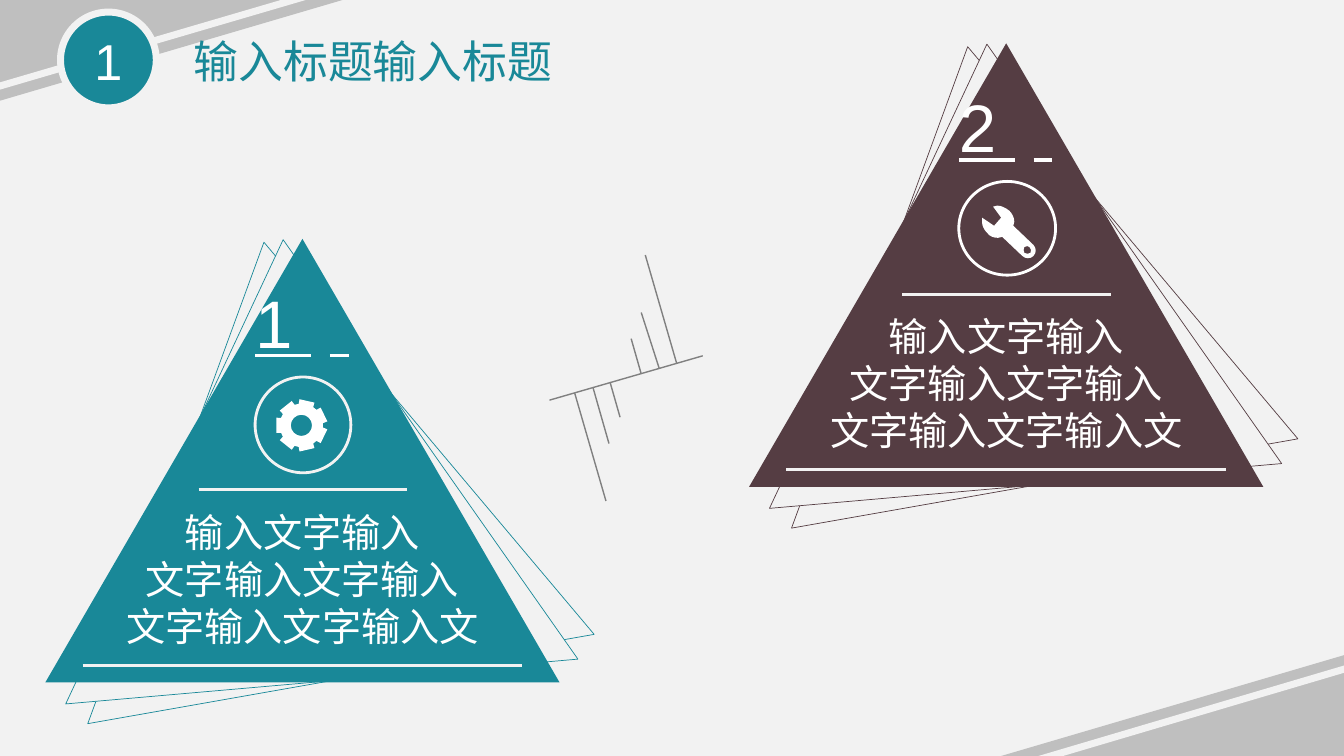
"""Build a slide with two numbered triangle cards joined by a ruled diagonal."""
from dataclasses import dataclass
from math import cos, radians, sin
from typing import Callable, Optional

from lxml.etree import SubElement
from pptx import Presentation
from pptx.dml.color import RGBColor
from pptx.enum.shapes import MSO_CONNECTOR, MSO_SHAPE as Preset
from pptx.enum.text import MSO_ANCHOR as Anchor, MSO_AUTO_SIZE as AutoSize, PP_ALIGN as Align
from pptx.oxml.ns import qn
from pptx.util import Emu, Pt

PX = 9144
TEAL, PLUM, PALE, WHITE = "198898", "553D43", "F2F2F2", "FFFFFF"
SILVER, GREY = "BFBFBF", "808080"

Point = tuple[float, float]
Step = tuple[Point, ...]
Contour = list[Step]


@dataclass(frozen=True)
class Box:
    left: int
    top: int
    width: int
    height: int

    def emu(self) -> tuple[Emu, ...]:
        return tuple(px(v) for v in (self.left, self.top, self.width, self.height))


@dataclass(frozen=True)
class Stroke:
    color: str
    points: float


@dataclass(frozen=True)
class Card:
    number: str
    left: int
    top: int
    color: str
    ring: Box
    ring_color: str
    icon: Callable[[], list[Contour]]


@dataclass(frozen=True)
class Segment:
    x1: int
    y1: int
    x2: int
    y2: int


def px(length: float) -> Emu:
    return Emu(round(length * PX))


def rgb(color: str) -> RGBColor:
    return RGBColor.from_string(color)


def add_preset(shapes, preset, box: Box, fill: Optional[str] = None,
               stroke: Optional[Stroke] = None, rotation: float = 0):
    shape = shapes.add_shape(preset, *box.emu())
    shape.shadow.inherit = False
    shape.rotation = rotation
    if fill:
        shape.fill.solid()
        shape.fill.fore_color.rgb = rgb(fill)
    else:
        shape.fill.background()
    if stroke:
        shape.line.color.rgb = rgb(stroke.color)
        shape.line.width = Pt(stroke.points)
    else:
        shape.line.fill.background()
    return shape


def add_line(shapes, segment: Segment, stroke: Stroke) -> None:
    ends = (px(v) for v in (segment.x1, segment.y1, segment.x2, segment.y2))
    connector = shapes.add_connector(MSO_CONNECTOR.STRAIGHT, *ends)
    connector.line.color.rgb = rgb(stroke.color)
    connector.line.width = Pt(stroke.points)
    SubElement(connector.element.spPr, qn("a:effectLst"))


def format_text(frame, size: int, font: str, color: str, align=Align.CENTER) -> None:
    for paragraph in frame.paragraphs:
        paragraph.alignment = align
        for run in paragraph.runs:
            run.font.size, run.font.name = Pt(size), font
            run.font.color.rgb = rgb(color)


def gear() -> list[Contour]:
    tooth = ((-20, 21.5), (-17, 26), (17, 26), (20, 21.5))
    rim = [((radius * cos(radians(180 + index * 360 / 7 + turn)),
             radius * sin(radians(180 + index * 360 / 7 + turn))),)
           for index in range(7) for turn, radius in tooth]
    r, k = 10.5, 5.8
    hole = [((0, -r),), ((-k, -r), (-r, -k), (-r, 0)), ((-r, k), (-k, r), (0, r)),
            ((k, r), (r, k), (r, 0)), ((r, -k), (k, -r), (0, -r))]
    return [rim, hole]


def wrench() -> list[Contour]:
    outline = [((-12, -23),), ((-8, -24),), ((-4, -24), (0, -22), (4, -19)),
               ((7, -16), (9, -12), (9, -8)), ((8, -4),), ((28, 15),),
               ((31, 18), (31, 23), (28, 26)), ((25, 29), (20, 29), (17, 26)),
               ((-3, 7),), ((-7, 8),), ((-11, 8), (-15, 7), (-18, 3)),
               ((-21, 0), (-23, -4), (-23, -8)), ((-23, -12),), ((-11, -4),), ((-4, -12),)]
    hole = [((19, 17),), ((18, 19), (18, 21), (19, 23)), ((21, 24), (23, 24), (25, 23)),
            ((26, 21), (26, 19), (24, 17)), ((23, 16), (21, 16), (19, 17))]
    return [outline, hole]


def add_icon(shapes, contours: list[Contour], x: int, y: int) -> None:
    placed = [[(px(x + dx), px(y + dy)) for step in contour for dx, dy in step]
              for contour in contours]
    builder = shapes.build_freeform(*placed[0][0])
    builder.add_line_segments(placed[0][1:], close=True)
    for contour in placed[1:]:
        builder.move_to(*contour[0])
        builder.add_line_segments(contour[1:], close=True)
    icon = builder.convert_to_shape()
    lines = iter(list(icon.element.iter(qn("a:lnTo"))))
    for step in (step for contour in contours for step in contour[1:]):
        first, *others = [next(lines) for _ in step]
        if others:
            first.tag = qn("a:cubicBezTo")
            for other in others:
                first.append(other[0])
                other.getparent().remove(other)
    icon.shadow.inherit = False
    icon.fill.solid()
    icon.fill.fore_color.rgb = rgb(WHITE)
    icon.line.fill.background()


def add_card(slide, card: Card) -> None:
    shapes = slide.shapes.add_group_shape().shapes
    x, y = card.left, card.top
    triangle = Box(x, y, 510, 440)
    for rotation in (350, 355):
        add_preset(shapes, Preset.ISOSCELES_TRIANGLE, triangle, PALE,
                   Stroke(card.color, 0.5), rotation)
    add_preset(shapes, Preset.ISOSCELES_TRIANGLE, triangle, card.color)

    number = shapes.add_textbox(*Box(x + 198, y + 37, 113, 91).emu()).text_frame
    number.word_wrap = False
    for text, underlined in ((f"{card.number} ", True), (" ", False), (" ", True)):
        run = number.paragraphs[0].add_run()
        run.text, run.font.underline = text, underlined
    format_text(number, 48, "Arial", WHITE)

    body = shapes.add_textbox(*Box(x + 63, y + 262, 384, 151).emu()).text_frame
    body.word_wrap = True
    body.text = "输入文字输入\n文字输入文字输入\n文字输入文字输入文"
    format_text(body, 28, "Calibri", WHITE)

    for inset, drop, length in ((152, 249, 207), (37, 423, 436)):
        add_line(shapes, Segment(x + inset, y + drop, x + inset + length, y + drop),
                 Stroke(PALE, 2))
    add_preset(shapes, Preset.OVAL, card.ring, stroke=Stroke(card.ring_color, 2))
    add_icon(shapes, card.icon(), x + 254, y + 185)


def add_corners(slide) -> None:
    corners = ((Box(0, 0, 340, 100), 0, Segment(451, -47, -16, 90)),
               (Box(993, 650, 340, 100), 180, Segment(978, 769, 1444, 631)))
    for box, rotation, stripe in corners:
        corner = add_preset(slide.shapes, Preset.RIGHT_TRIANGLE, box, SILVER, rotation=rotation)
        corner.element.spPr.find(qn("a:xfrm")).set("flipV", "1")
        add_line(slide.shapes, stripe, Stroke(PALE, 5))


def add_heading(slide) -> None:
    badge = add_preset(slide.shapes, Preset.OVAL, Box(60, 12, 95, 95), TEAL, Stroke(PALE, 5))
    badge.text_frame.text = "1"
    badge.text_frame.vertical_anchor = Anchor.MIDDLE
    format_text(badge.text_frame, 36, "Arial", WHITE)

    title = slide.shapes.title
    title.left, title.top, title.width, title.height = Box(182, 28, 569, 64).emu()
    title.text_frame.text = "输入标题输入标题"
    title.text_frame.vertical_anchor = Anchor.TOP
    title.text_frame.auto_size = AutoSize.NONE
    format_text(title.text_frame, 32, "Calibri", TEAL, Align.LEFT)
    title.element.getparent().append(title.element)


def add_diagonal(slide) -> None:
    shapes = slide.shapes.add_group_shape().shapes
    add_line(shapes, Segment(697, 353, 545, 397), Stroke(GREY, 1))
    for side in (1, -1):
        for step, (run, rise) in enumerate(((10, 35), (17, 56), (31, 107))):
            x = 620.5 + side * (15.5 + 17.5 * step)
            y = 375 - side * (4 + 5.5 * step)
            tick = (x, y, x - side * run, y - side * rise)
            add_line(shapes, Segment(*map(round, tick)), Stroke(GREY, 1))


def main() -> None:
    presentation = Presentation()
    presentation.slide_width, presentation.slide_height = px(1333), px(750)
    slide = presentation.slides.add_slide(presentation.slide_layouts[5])
    slide.background.fill.solid()
    slide.background.fill.fore_color.rgb = rgb(PALE)
    add_corners(slide)
    for card in (Card("1", 45, 237, TEAL, Box(253, 374, 95, 95), PALE, gear),
                 Card("2", 743, 43, PLUM, Box(951, 180, 96, 93), WHITE, wrench)):
        add_card(slide, card)
    add_diagonal(slide)
    add_heading(slide)
    presentation.save("out.pptx")


if __name__ == "__main__":
    main()
